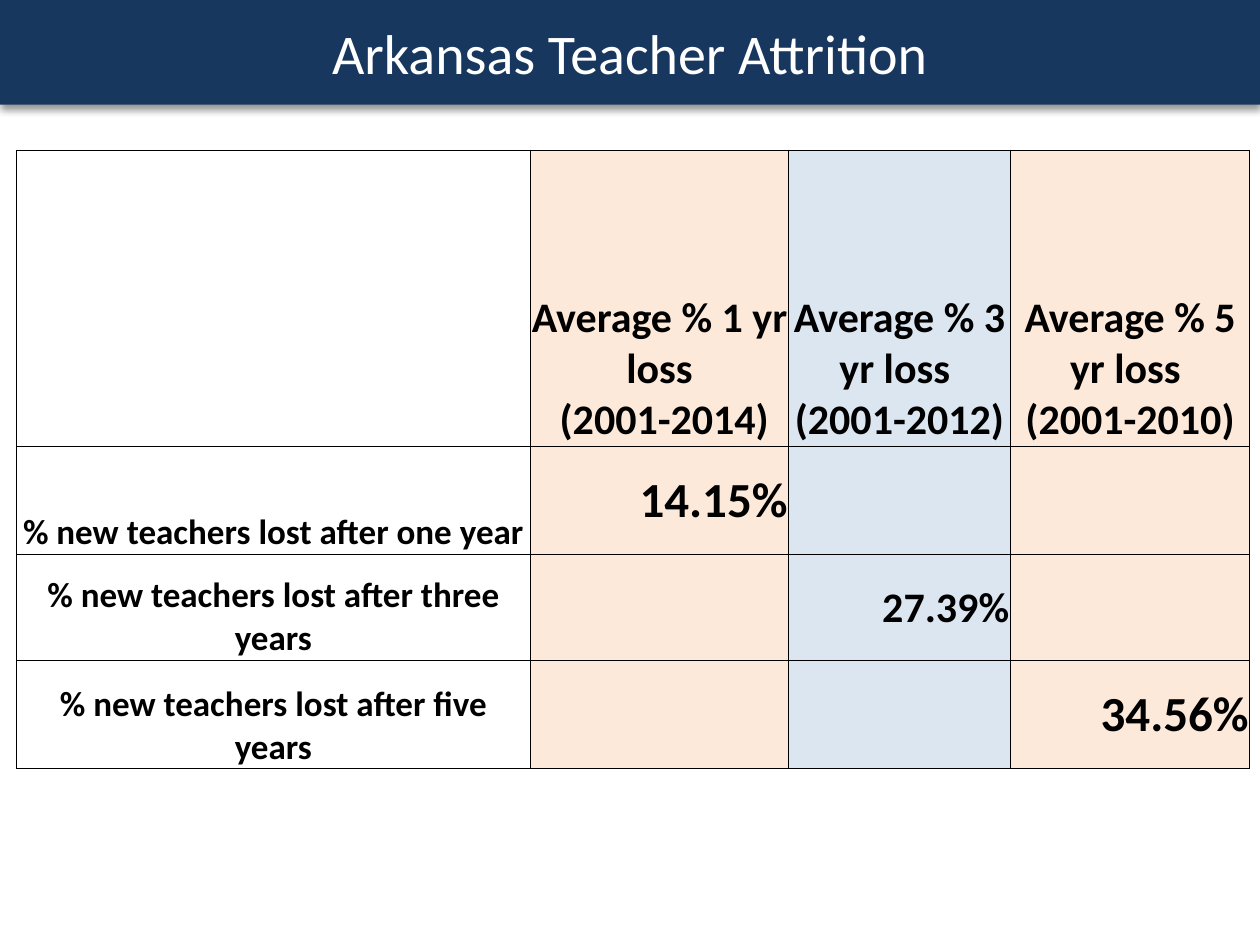
from lxml.etree import SubElement
from pptx import Presentation
from pptx.dml.color import RGBColor
from pptx.enum.text import MSO_ANCHOR as Anchor, MSO_AUTO_SIZE as AutoSize, PP_ALIGN as Align
from pptx.oxml import parse_xml
from pptx.oxml.ns import nsdecls, qn
from pptx.util import Inches, Pt

PEACH, BLUE = "FDE9D9", "DCE6F1"


def color(hex_string):
    return RGBColor.from_string(hex_string)


def add_text(paragraph, text, size, hex_string, bold, align):
    paragraph.alignment = align
    for index, line in enumerate(text.split("\n")):
        if index:
            paragraph.add_line_break()
        run = paragraph.add_run()
        run.text = line
        run.font.name = "Calibri"
        run.font.size = Pt(size)
        run.font.bold = bold
        run.font.color.rgb = color(hex_string)


presentation = Presentation()
presentation.slide_width, presentation.slide_height = Inches(10), Inches(7.5)
slide = presentation.slides.add_slide(presentation.slide_layouts[5])

# Title banner with a soft shadow below
title = slide.shapes.title
title.left, title.top = Inches(0), Inches(0)
title.width, title.height = Inches(10), Inches(0.83)
title.fill.solid()
title.fill.fore_color.rgb = color("17375E")
title.line.fill.background()
title.text_frame.auto_size = AutoSize.NONE
title.text_frame.vertical_anchor = Anchor.MIDDLE
add_text(title.text_frame.paragraphs[0], "Arkansas Teacher Attrition", 32, "FFFFFF", False, Align.CENTER)
title.element.spPr.append(parse_xml(
    f'<a:effectLst {nsdecls("a")}>'
    f'<a:outerShdw blurRad="{Pt(4)}" dist="{Pt(3)}" dir="5400000" rotWithShape="0">'
    '<a:srgbClr val="000000"><a:alpha val="40000"/></a:srgbClr>'
    '</a:outerShdw></a:effectLst>'))

# Attrition table
rows = [
    ["", "Average % 1 yr loss\n (2001-2014)", "Average % 3 yr loss \n(2001-2012)",
     "Average % 5 yr loss \n(2001-2010)"],
    ["% new teachers lost after one year", "14.15%", "", ""],
    ["% new teachers lost after three years", "", "27.39%", ""],
    ["% new teachers lost after five years", "", "", "34.56%"],
]
column_widths = [4.08, 2.05, 1.76, 1.9]
row_heights = [2.35, 0.86, 0.84, 0.86]
column_fills = [None, PEACH, BLUE, PEACH]
value_sizes = [None, 28, 24, 28]

table = slide.shapes.add_table(
    len(rows), len(column_widths), Inches(0.13), Inches(1.19),
    Inches(sum(column_widths)), Inches(sum(row_heights))).table
table.first_row = table.horz_banding = False
for column, width in zip(table.columns, column_widths):
    column.width = Inches(width)
for row, height in zip(table.rows, row_heights):
    row.height = Inches(height)

for row_index, row in enumerate(rows):
    for column_index, text in enumerate(row):
        cell = table.cell(row_index, column_index)
        cell.margin_left = cell.margin_right = cell.margin_top = Inches(0.01)
        cell.margin_bottom = Inches(0)

        # Thin black borders
        properties = cell._tc.get_or_add_tcPr()
        for side in ("a:lnL", "a:lnR", "a:lnT", "a:lnB"):
            border = SubElement(properties, qn(side), w=str(Pt(0.5)))
            border_fill = SubElement(border, qn("a:solidFill"))
            SubElement(border_fill, qn("a:srgbClr"), val="000000")

        # Fill by column
        if column_fills[column_index]:
            cell.fill.solid()
            cell.fill.fore_color.rgb = color(column_fills[column_index])
        else:
            cell.fill.background()

        # Headers and row labels sit at the bottom, values at the middle right
        if text:
            is_value = row_index > 0 and column_index > 0
            cell.vertical_anchor = Anchor.MIDDLE if is_value else Anchor.BOTTOM
            size = value_sizes[column_index] if is_value else 24 if row_index == 0 else 20
            align = Align.RIGHT if is_value else Align.CENTER
            add_text(cell.text_frame.paragraphs[0], text, size, "000000", True, align)

presentation.save("out.pptx")
